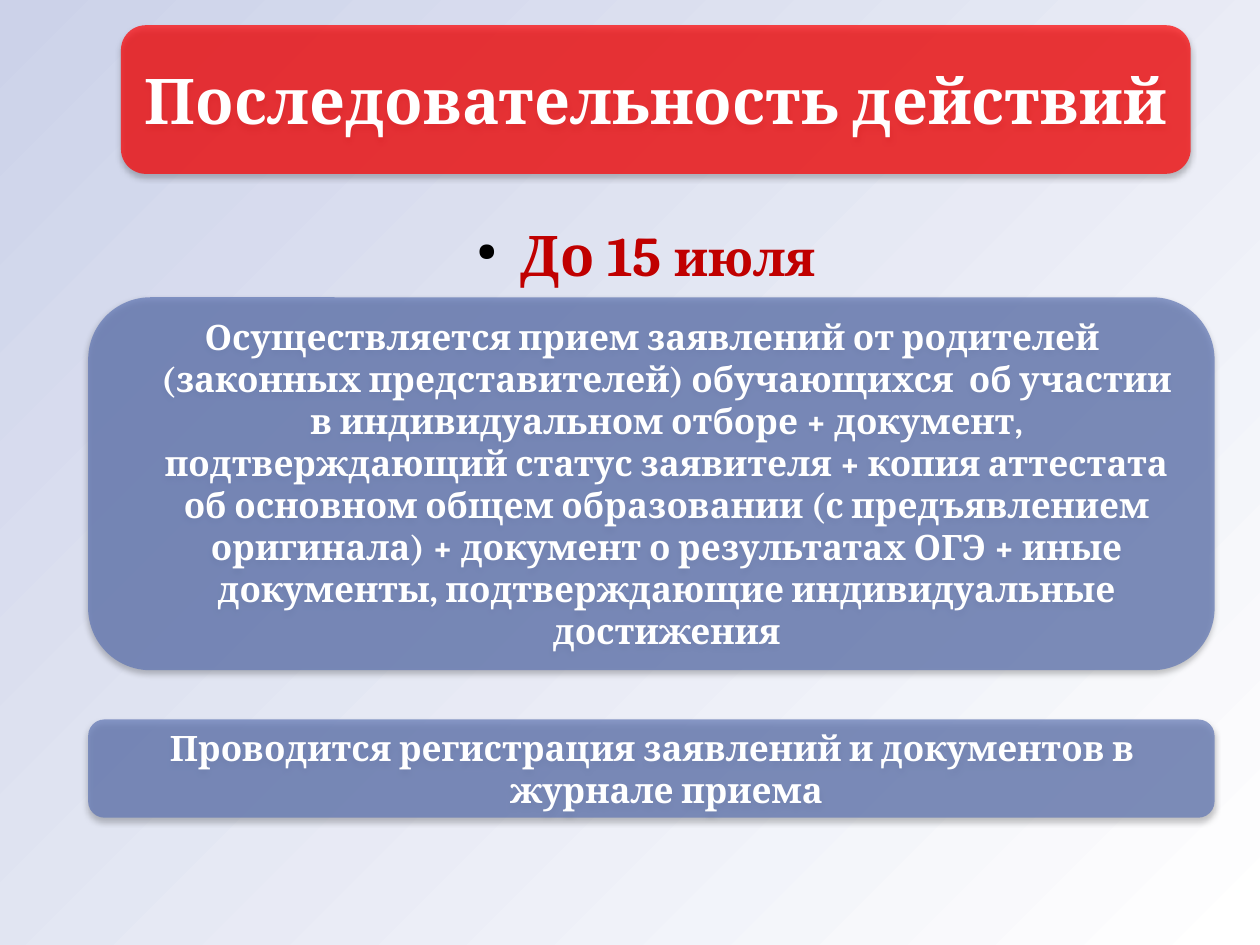
from lxml import etree
from pptx import Presentation
from pptx import util as u
from pptx.dml.color import RGBColor
from pptx.enum import shapes, text
from pptx.oxml import ns

WHITE = RGBColor(0xFF, 0xFF, 0xFF)
LAVENDER = RGBColor(0xCC, 0xD2, 0xE9)
RED = RGBColor(0xFF, 0x00, 0x00)
DARK_RED = RGBColor(0xC0, 0x00, 0x00)
BLUE = RGBColor(0x60, 0x76, 0xB4)
BLACK = RGBColor(0x00, 0x00, 0x00)
FONT = "Cambria"

presentation = Presentation()
presentation.slide_width = u.Inches(10)
presentation.slide_height = u.Inches(7.5)
slide = presentation.slides.add_slide(presentation.slide_layouts[6])

# Each slide side is split into 100 columns and 75 rows
column = presentation.slide_width / 100
row = presentation.slide_height / 75


def add_xml(parent, tag, **attributes):
    element = etree.SubElement(parent, ns.qn(tag))
    for name, value in attributes.items():
        element.set(name, str(value))
    return element


def format_run(run, size, color):
    run.font.name = FONT
    run.font.size = u.Pt(size)
    run.font.bold = True
    run.font.color.rgb = color


# Diagonal background gradient
background = slide.background.fill
background.gradient()
background.gradient_angle = 315
for stop, color in zip(background.gradient_stops, (LAVENDER, WHITE)):
    stop.color.rgb = color

# Deadline with a bullet
deadline = slide.shapes.add_textbox(
    int(5 * column), int(17.5 * row), int(91.4 * column), int(6 * row))
frame = deadline.text_frame
frame.word_wrap = True
frame.margin_left = frame.margin_right = frame.margin_top = frame.margin_bottom = 0
paragraph = frame.paragraphs[0]
paragraph.alignment = text.PP_ALIGN.CENTER
paragraph.space_before = u.Pt(14.2)
for words, size in (("До 15 ", 32), ("июля", 28)):
    run = paragraph.add_run()
    run.text = words
    format_run(run, size, DARK_RED)
properties = paragraph._p.get_or_add_pPr()
properties.set("marL", str(u.Inches(0.47)))
properties.set("indent", str(u.Inches(-0.35)))
add_xml(add_xml(properties, "a:buClr"), "a:srgbClr", val=BLACK)
add_xml(properties, "a:buSzPct", val=45000)
add_xml(properties, "a:buChar", char="●")

# Title and step panels: left, top, width, height, fill, size, hanging indent, words
panels = [
    (9.6, 2, 84.9, 11.8, RED, 36, False, "Последовательность действий"),
    (7, 23.6, 89.4, 29.6, BLUE, 20, True,
     "Осуществляется прием заявлений от родителей (законных представителей) "
     "обучающихся  об участии в индивидуальном отборе + документ, подтверждающий "
     "статус заявителя + копия аттестата об основном общем образовании "
     "(с предъявлением оригинала) + документ о результатах ОГЭ + иные документы, "
     "подтверждающие индивидуальные достижения"),
    (7, 57.1, 89.4, 7.8, BLUE, 20, True,
     "Проводится регистрация заявлений и документов в журнале приема"),
]
for left, top, width, height, color, size, hanging, words in panels:
    shape = slide.shapes.add_shape(
        shapes.MSO_SHAPE.ROUNDED_RECTANGLE,
        int(left * column), int(top * row), int(width * column), int(height * row))
    shape.adjustments[0] = 0.167
    shape.line.fill.background()

    # Translucent fill and soft shadow below
    shape.fill.solid()
    shape.fill.fore_color.rgb = color
    fill_color = shape._element.spPr.find(".//" + ns.qn("a:srgbClr"))
    add_xml(fill_color, "a:alpha", val=71000)
    shape.shadow.inherit = False
    effects = shape._element.spPr.find(ns.qn("a:effectLst"))
    shadow = add_xml(effects, "a:outerShdw", blurRad=u.Pt(3.5), dist=u.Pt(2.2),
                     dir=90 * 60000, algn="ctr", rotWithShape=0)
    add_xml(add_xml(shadow, "a:srgbClr", val=BLACK), "a:alpha", val=32000)

    # Centred white words
    frame = shape.text_frame
    frame.word_wrap = True
    frame.vertical_anchor = text.MSO_ANCHOR.MIDDLE
    frame.text = words
    paragraph = frame.paragraphs[0]
    paragraph.alignment = text.PP_ALIGN.CENTER
    format_run(paragraph.runs[0], size, WHITE)
    if hanging:
        properties = paragraph._p.get_or_add_pPr()
        properties.set("marL", str(u.Inches(0.24)))
        properties.set("indent", str(u.Inches(-0.23)))

presentation.save("out.pptx")
